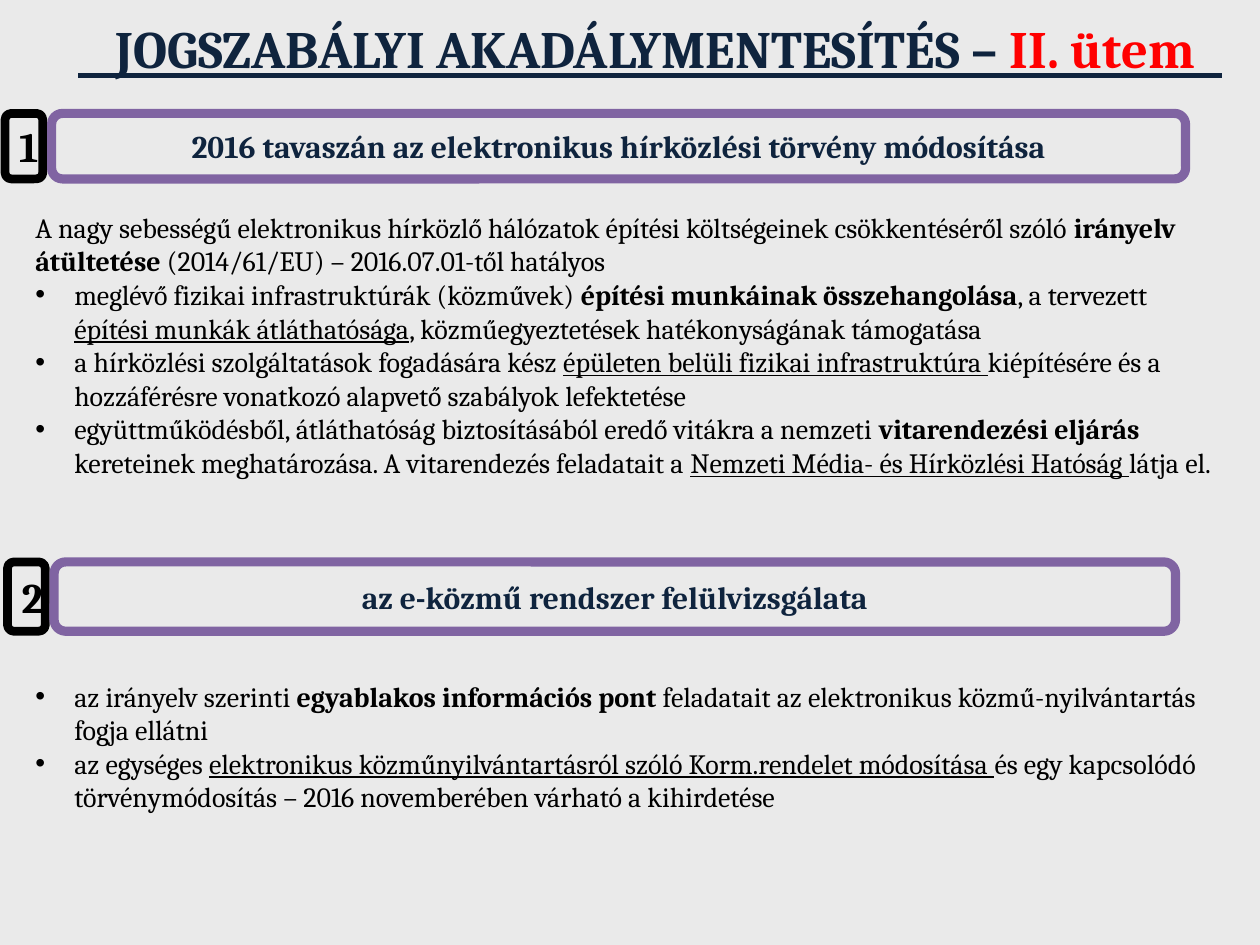
from lxml import etree
from pptx import Presentation
from pptx.dml.color import RGBColor
from pptx.enum.shapes import MSO_CONNECTOR, MSO_SHAPE
from pptx.enum.text import MSO_ANCHOR, MSO_AUTO_SIZE, PP_ALIGN
from pptx.oxml.ns import qn
from pptx.util import Inches, Pt

STRAIGHT = MSO_CONNECTOR.STRAIGHT
ROUNDED = MSO_SHAPE.ROUNDED_RECTANGLE
TOP, MIDDLE = MSO_ANCHOR.TOP, MSO_ANCHOR.MIDDLE
CENTER, LEFT = PP_ALIGN.CENTER, PP_ALIGN.LEFT
FONT = "Cambria"
COLORS = {"background": "EAEAEA", "navy": "0F243E", "red": "FF0000",
          "black": "000000", "purple": "8064A2"}


def place(shape, left, top, width, height):
    shape.left, shape.top = Inches(left), Inches(top)
    shape.width, shape.height = Inches(width), Inches(height)
    shape.text_frame.word_wrap = True
    shape.text_frame.auto_size = MSO_AUTO_SIZE.NONE
    shape.text_frame.vertical_anchor = TOP


def add_run(paragraph, text, size, color, bold=False, underline=False):
    run = paragraph.add_run()
    run.text = text
    run.font.name = FONT
    run.font.size = Pt(size)
    run.font.bold = bold
    run.font.underline = underline
    run.font.color.rgb = RGBColor.from_string(COLORS[color])


presentation = Presentation()
presentation.slide_width, presentation.slide_height = Inches(10), Inches(7.5)
slide = presentation.slides.add_slide(presentation.slide_layouts[3])
slide.background.fill.solid()
slide.background.fill.fore_color.rgb = RGBColor.from_string(COLORS["background"])
title, *bodies = slide.placeholders

# Title and the rule under it
place(title, 0.39, 0.08, 9.53, 0.61)
paragraph = title.text_frame.paragraphs[0]
paragraph.alignment = CENTER
add_run(paragraph, " JOGSZABÁLYI AKADÁLYMENTESÍTÉS – ", 30, "navy", bold=True)
add_run(paragraph, "II. ütem", 30, "red", bold=True)

rule = slide.shapes.add_connector(STRAIGHT, Inches(0.62), Inches(0.6), Inches(9.7), Inches(0.6))
rule.line.color.rgb = RGBColor.from_string(COLORS["navy"])
rule.line.width = Pt(3)
etree.SubElement(rule._element.spPr, qn("a:effectLst"))

# Numbered section headings: text, box, size, line colour, line width, text colour
headings = [
    ("1", (0.04, 0.9, 0.3, 0.52), 24, "black", 5, "black"),
    ("2016 tavaszán az elektronikus hírközlési törvény módosítása",
     (0.41, 0.9, 9, 0.52), 18, "purple", 5.25, "navy"),
    ("2", (0.06, 4.46, 0.3, 0.55), 24, "black", 5, "black"),
    ("az e-közmű rendszer felülvizsgálata",
     (0.43, 4.46, 8.9, 0.55), 18, "purple", 5.25, "navy"),
]
for text, box, size, line_color, line_width, text_color in headings:
    shape = slide.shapes.add_shape(ROUNDED, *map(Inches, box))
    shape.shadow.inherit = False
    shape.fill.background()
    shape.line.color.rgb = RGBColor.from_string(COLORS[line_color])
    shape.line.width = Pt(line_width)
    shape.text_frame.word_wrap = True
    shape.text_frame.vertical_anchor = MIDDLE
    paragraph = shape.text_frame.paragraphs[0]
    paragraph.alignment = CENTER
    add_run(paragraph, text, size, text_color, bold=True)

# Section texts: each paragraph is (bulleted, runs), each run (text, style)
PLAIN, BOLD, UNDERLINE = {}, {"bold": True}, {"underline": True}
sections = [
    ((0.18, 1.62, 9.64, 2.52), [
        (False, [
            ("A nagy sebességű elektronikus hírközlő hálózatok építési költségeinek "
             "csökkentéséről szóló ", PLAIN),
            ("irányelv átültetése ", BOLD),
            ("(2014/61/EU) – 2016.07.01-től hatályos", PLAIN)]),
        (True, [
            ("meglévő fizikai infrastruktúrák (közművek) ", PLAIN),
            ("építési munkáinak összehangolása", BOLD),
            (", a tervezett ", PLAIN),
            ("építési munkák átláthatósága", UNDERLINE),
            (", közműegyeztetések hatékonyságának támogatása", PLAIN)]),
        (True, [
            ("a hírközlési szolgáltatások fogadására kész ", PLAIN),
            ("épületen belüli fizikai infrastruktúra ", UNDERLINE),
            ("kiépítésére és a hozzáférésre vonatkozó alapvető szabályok lefektetése", PLAIN)]),
        (True, [
            ("együttműködésből, átláthatóság biztosításából eredő vitákra a nemzeti ", PLAIN),
            ("vitarendezési eljárás ", BOLD),
            ("kereteinek meghatározása. A vitarendezés feladatait a ", PLAIN),
            ("Nemzeti Média- és Hírközlési Hatóság ", UNDERLINE),
            ("látja el.", PLAIN)]),
    ]),
    ((0.18, 5.34, 9.64, 1.56), [
        (True, [
            ("az irányelv szerinti ", PLAIN),
            ("egyablakos információs pont ", BOLD),
            ("feladatait az elektronikus közmű-nyilvántartás fogja ellátni", PLAIN)]),
        (True, [
            ("az egységes ", PLAIN),
            ("elektronikus közműnyilvántartásról szóló Korm.rendelet módosítása ", UNDERLINE),
            ("és egy kapcsolódó törvénymódosítás – 2016 novemberében várható a kihirdetése",
             PLAIN)]),
    ]),
]
for body, (box, paragraphs) in zip(bodies, sections):
    place(body, *box)
    for index, (bulleted, runs) in enumerate(paragraphs):
        frame = body.text_frame
        paragraph = frame.add_paragraph() if index else frame.paragraphs[0]
        paragraph.alignment = LEFT
        paragraph.space_before = Pt(0)
        indent = Inches(0.31) if bulleted else 0
        properties = paragraph._p.get_or_add_pPr()
        properties.set("marL", str(indent))
        properties.set("indent", str(-indent))
        if bulleted:
            etree.SubElement(properties, qn("a:buFont"), typeface="Arial")
            etree.SubElement(properties, qn("a:buChar"), char="•")
        else:
            etree.SubElement(properties, qn("a:buNone"))
        for text, style in runs:
            add_run(paragraph, text, 16, "black", **style)

presentation.save("out.pptx")
